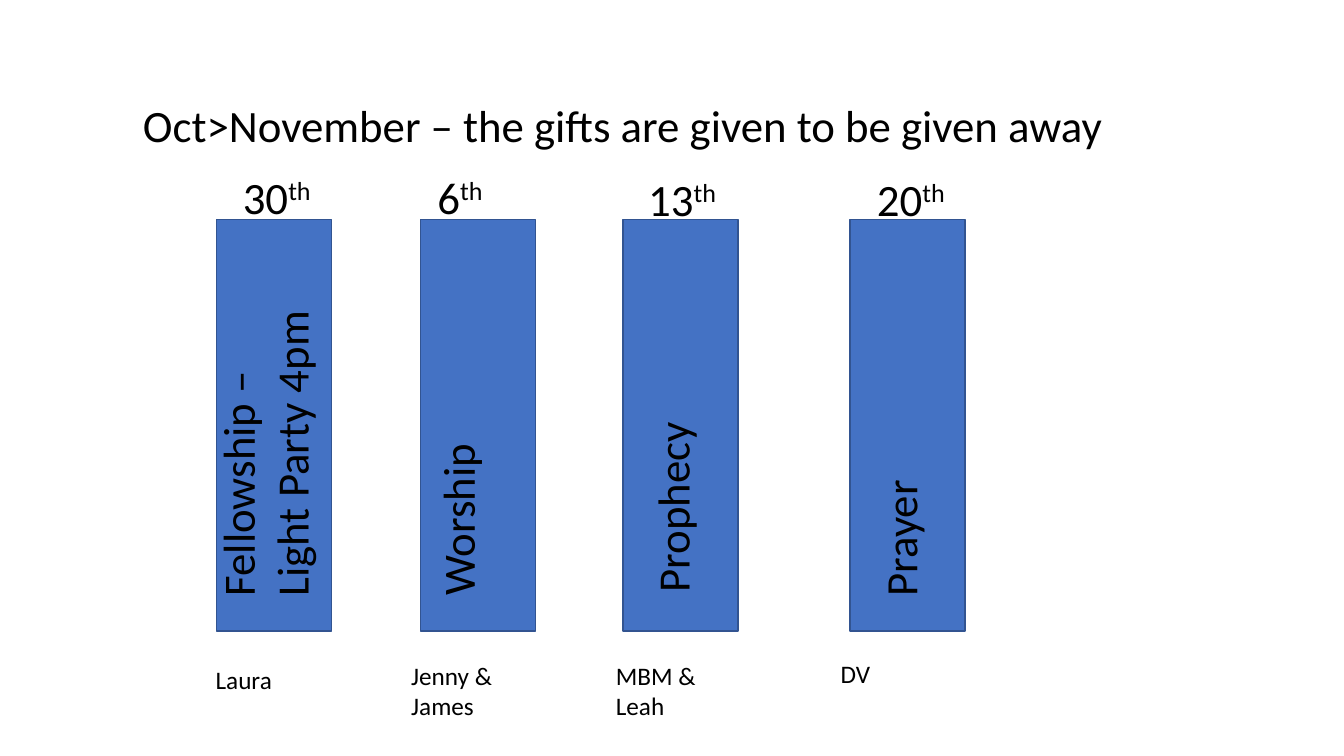
from pptx import Presentation
from pptx import util as u
from pptx.dml.color import RGBColor
from pptx.enum import shapes, text

PX = 9144  # 100 px to the inch
BLUE = RGBColor(0x44, 0x72, 0xC4)
EDGE = RGBColor(0x32, 0x54, 0x91)
BLACK = RGBColor(0, 0, 0)
BAR_TOP, BAR_W, BAR_H = 218, 114, 408

# Bar left, then each label as (words, box relative to the bar's corner)
WEEKS = [
    (215, ("30", (16, -55, 98, 148)),
     ("Fellowship – Light Party 4pm", (-120, 157, 335, 118)),
     ("Laura", (-11, 436, 132, 40))),
    (417, ("6", (7, -55, 107, 94)),
     ("Worship", (-131, 183, 335, 64)),
     ("Jenny & James", (-19, 432, 132, 71))),
    (618, ("13", (15, -53, 99, 148)),
     ("Prophecy", (-119, 180, 335, 64)),
     ("MBM & Leah", (-17, 432, 132, 71))),
    (843, ("20", (17, -53, 96, 148)),
     ("Prayer", (-118, 184, 335, 64)),
     ("DV", (-19, 430, 132, 40))),
]


def scale(box):
    return [n * PX for n in box]


def add_run(para, words, size):
    run = para.add_run()
    run.text = words
    style = {"name": "Calibri", "size": u.Pt(size)}
    for key, value in style.items():
        setattr(run.font, key, value)
    run.font.color.rgb = BLACK
    return run


def add_label(slide, words, box, size=32, turn=0, wrap=True):
    label = slide.shapes.add_textbox(*scale(box))
    label.rotation = turn
    frame = label.text_frame
    style = {"word_wrap": wrap,
             "auto_size": text.MSO_AUTO_SIZE.SHAPE_TO_FIT_TEXT}
    for key, value in style.items():
        setattr(frame, key, value)
    para = frame.paragraphs[0]
    add_run(para, words, size)
    return para


def add_title(slide, box):
    add_label(slide, "Oct>November – the gifts are given to be given away",
              box, wrap=False)


def add_week(slide, box, date, theme, lead):
    left, top = box[:2]

    def place(part):
        x, y, wide, high = part
        return left + x, top + y, wide, high

    # Bar
    bar = slide.shapes.add_shape(shapes.MSO_SHAPE.RECTANGLE, *scale(box))
    bar.shadow.inherit = False
    bar.fill.solid()
    bar.fill.fore_color.rgb = BLUE
    bar.line.color.rgb = EDGE
    bar.line.width = u.Pt(1)

    # Date with raised ending
    para = add_label(slide, date[0], place(date[1]))
    raised = add_run(para, "th", 32)
    raised._r.get_or_add_rPr().set("baseline", "30000")

    # Theme reading upwards, and who leads
    add_label(slide, theme[0], place(theme[1]), turn=270)
    add_label(slide, lead[0], place(lead[1]), size=18)


def main():
    deck = Presentation()
    deck.slide_width, deck.slide_height = scale((1333, 750))
    slide = deck.slides.add_slide(deck.slide_layouts[6])
    add_title(slide, (132, 92, 983, 64))
    for left, date, theme, lead in WEEKS:
        add_week(slide, (left, BAR_TOP, BAR_W, BAR_H), date, theme, lead)
    deck.save("out.pptx")


if __name__ == "__main__":
    main()
